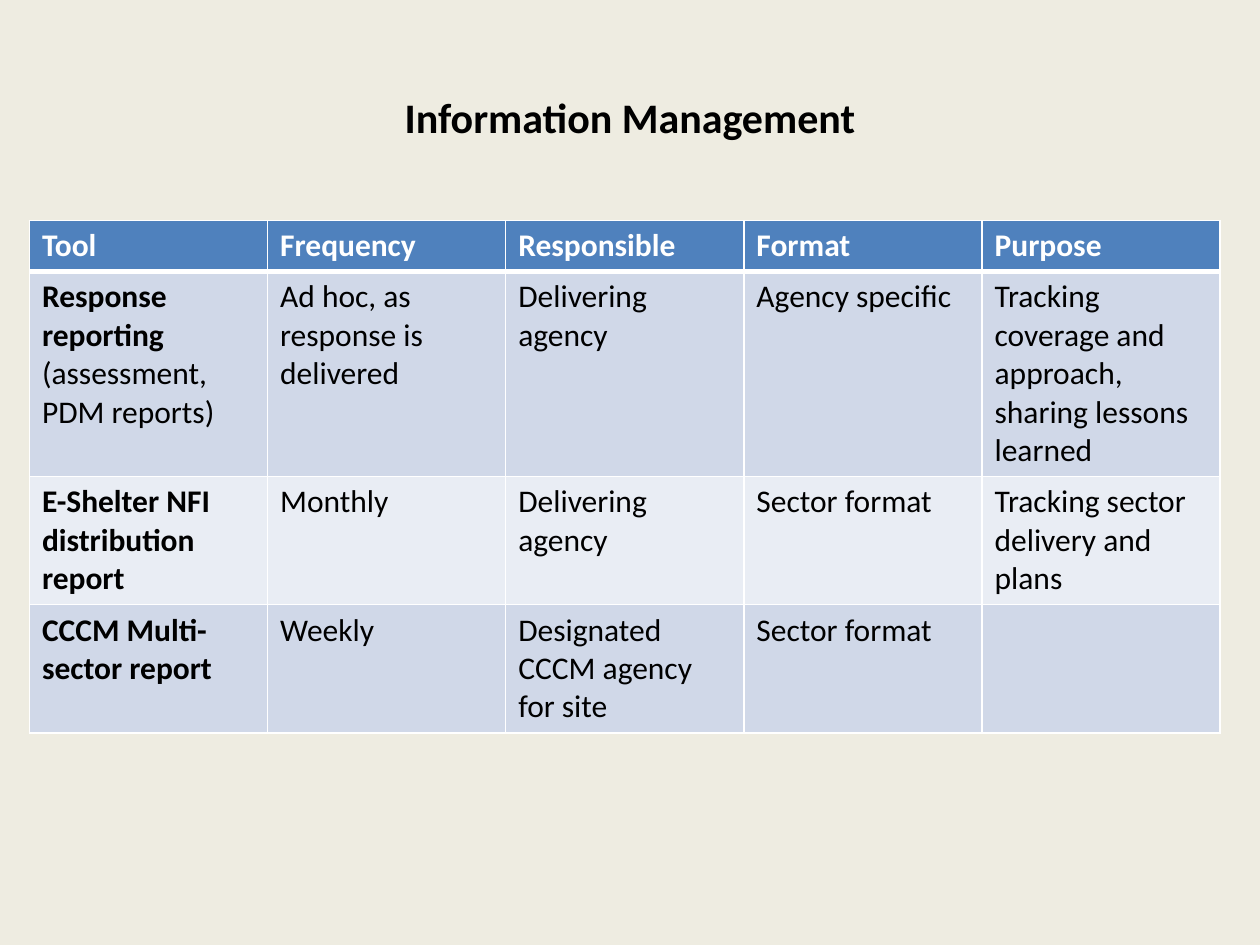
"""Build the Information Management slide with its table of reporting tools."""
import pptx
import pptx.dml.color
import pptx.enum.text
import pptx.oxml.ns
import pptx.util
from lxml import etree

Pt = pptx.util.Pt

COLORS = {
    "background": "EEECE1",
    "text": "000000",
    "white": "FFFFFF",
    "header": "4F81BD",
    "odd": "D0D8E8",
    "even": "E9EDF4",
}
FONT = "Calibri"
HEADERS = ["Tool", "Frequency", "Responsible", "Format", "Purpose"]
TOOLS = [
    [("Response reporting ", "(assessment, PDM reports)"), "Ad hoc, as response is delivered",
     "Delivering agency", "Agency specific",
     "Tracking coverage and approach, sharing lessons learned"],
    [("E-Shelter NFI distribution report",), "Monthly", "Delivering agency",
     "Sector format", "Tracking sector delivery and plans"],
    [("CCCM Multi-sector report",), "Weekly", "Designated CCCM agency for site",
     "Sector format", ""],
]
ROW_HEIGHTS = [29.2, 117.2, 73.2, 73.2]
COL_WIDTH = 136.1


def rgb(name):
    return pptx.dml.color.RGBColor.from_string(COLORS[name])


def add_run(p, text, size, color="text", bold=False):
    r = p.add_run()
    r.text = text
    r.font.name = FONT
    r.font.size = Pt(size)
    r.font.bold = bold
    r.font.color.rgb = rgb(color)


def add_title(s, text):
    sp = s.shapes.add_textbox(Pt(36), Pt(21.6), Pt(648), Pt(90))
    tf = sp.text_frame
    tf.word_wrap = True
    tf.vertical_anchor = pptx.enum.text.MSO_ANCHOR.MIDDLE
    p = tf.paragraphs[0]
    p.alignment = pptx.enum.text.PP_ALIGN.CENTER
    add_run(p, text, 24, bold=True)


def set_border(cell, side, width):
    qn = pptx.oxml.ns.qn
    tc_pr = cell._tc.get_or_add_tcPr()
    ln = etree.SubElement(tc_pr, qn(f"a:ln{side}"), w=str(Pt(width)))
    fill = etree.SubElement(ln, qn("a:solidFill"))
    etree.SubElement(fill, qn("a:srgbClr"), val=COLORS["white"])


def style_cell(cell, fill, top=1, bottom=1):
    for side, width in (("L", 1), ("R", 1), ("T", top), ("B", bottom)):
        set_border(cell, side, width)
    cell.fill.solid()
    cell.fill.fore_color.rgb = rgb(fill)


def fill_header(table):
    for cell, text in zip(table.rows[0].cells, HEADERS):
        style_cell(cell, "header", bottom=3)
        add_run(cell.text_frame.paragraphs[0], text, 18, "white", True)


def fill_tool(table, i, values):
    for cell, value in zip(table.rows[i].cells, values):
        style_cell(cell, "odd" if i % 2 else "even", top=3 if i == 1 else 1)
        p = cell.text_frame.paragraphs[0]
        if isinstance(value, tuple):
            for j, text in enumerate(value):
                add_run(p, text, 18, bold=j == 0)
        elif value:
            add_run(p, value, 18)


def add_tools_table(s):
    n_rows, n_cols = len(ROW_HEIGHTS), len(HEADERS)
    table = s.shapes.add_table(n_rows, n_cols, Pt(16.8), Pt(126),
                               Pt(COL_WIDTH * n_cols), Pt(sum(ROW_HEIGHTS))).table
    for col in table.columns:
        col.width = Pt(COL_WIDTH)
    for row, height in zip(table.rows, ROW_HEIGHTS):
        row.height = Pt(height)
    fill_header(table)
    for i, values in enumerate(TOOLS, start=1):
        fill_tool(table, i, values)


def main():
    prs = pptx.Presentation()
    prs.slide_width, prs.slide_height = Pt(720), Pt(540)
    s = prs.slides.add_slide(prs.slide_layouts[6])
    s.background.fill.solid()
    s.background.fill.fore_color.rgb = rgb("background")
    add_title(s, "Information Management")
    add_tools_table(s)
    prs.save("out.pptx")


if __name__ == "__main__":
    main()
